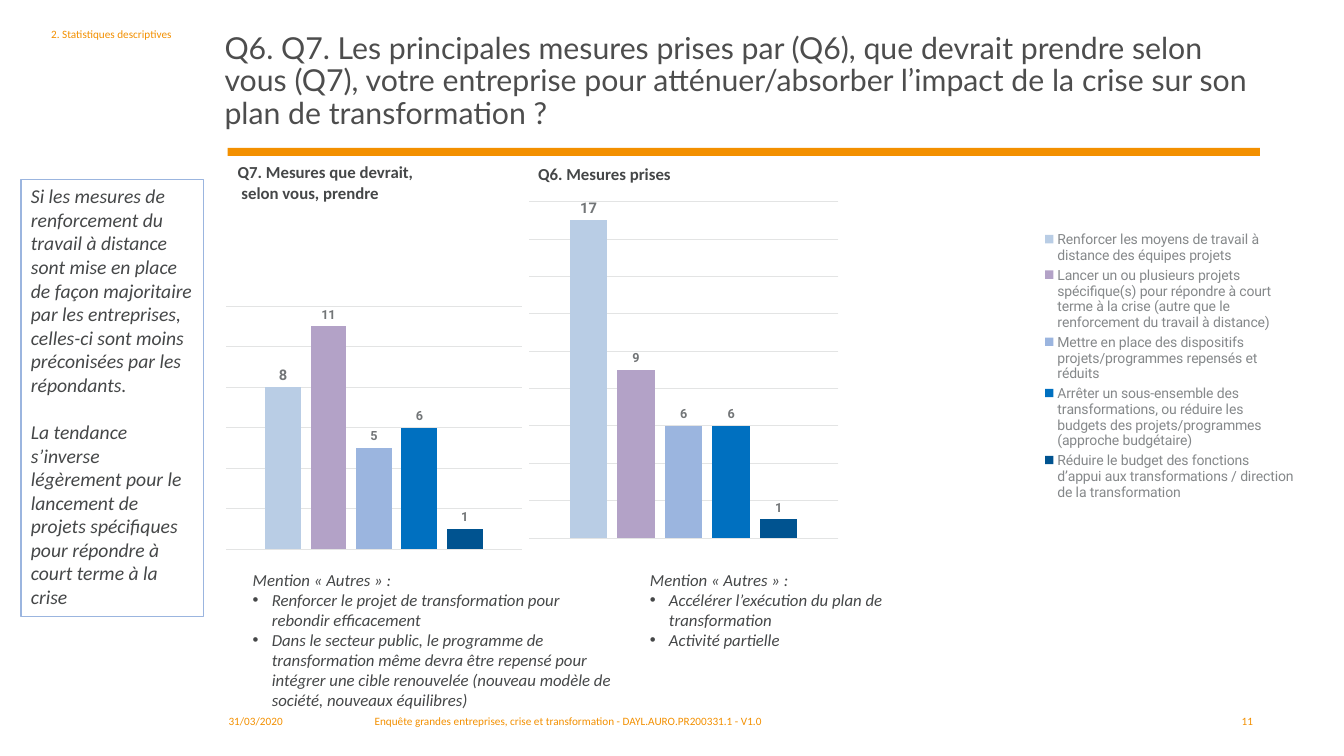
from dataclasses import dataclass

from lxml import etree
from pptx import Presentation
from pptx.chart.chart import Chart
from pptx.chart.data import CategoryChartData
from pptx.dml.color import RGBColor
from pptx.enum.chart import XL_CHART_TYPE, XL_LABEL_POSITION, XL_LEGEND_POSITION
from pptx.enum.shapes import MSO_SHAPE
from pptx.enum.text import MSO_ANCHOR, PP_ALIGN
from pptx.oxml import parse_xml
from pptx.oxml.ns import nsdecls, qn
from pptx.slide import Slide
from pptx.text.text import TextFrame
from pptx.util import Cm, Pt

COLUMNS = XL_CHART_TYPE.COLUMN_CLUSTERED
OUTSIDE_END = XL_LABEL_POSITION.OUTSIDE_END
LEGEND_RIGHT = XL_LEGEND_POSITION.RIGHT
RECTANGLE = MSO_SHAPE.RECTANGLE
TOP, BOTTOM = MSO_ANCHOR.TOP, MSO_ANCHOR.BOTTOM
LEFT, RIGHT = PP_ALIGN.LEFT, PP_ALIGN.RIGHT

ORANGE = RGBColor(0xF3, 0x90, 0x00)
TITLE_GREY = RGBColor(0x4D, 0x4D, 0x4D)
TEXT_GREY = RGBColor(0x45, 0x47, 0x48)
LABEL_GREY = RGBColor(0x72, 0x75, 0x77)
LEGEND_GREY = RGBColor(0x85, 0x88, 0x8A)
GRID_GREY = RGBColor(0xE3, 0xE4, 0xE4)
WHITE = RGBColor(0xFF, 0xFF, 0xFF)
BORDER_BLUE = RGBColor(0x9B, 0xB5, 0xDF)


@dataclass(frozen=True)
class Area:
    left: float
    top: float
    width: float
    height: float

    def lengths(self) -> tuple[Cm, Cm, Cm, Cm]:
        return Cm(self.left), Cm(self.top), Cm(self.width), Cm(self.height)


@dataclass(frozen=True)
class Style:
    size: float
    color: RGBColor
    font: str = "Calibri"
    bold: bool = False
    italic: bool = False


@dataclass(frozen=True)
class TextBlock:
    area: Area
    lines: tuple[str, ...]
    style: Style
    align: PP_ALIGN = LEFT
    anchor: MSO_ANCHOR = TOP
    line_spacing: float = 1.0
    bulleted: bool = False


@dataclass(frozen=True)
class Measure:
    name: str
    color: RGBColor
    wanted: int
    taken: int
    label_size: float = 9


@dataclass(frozen=True)
class MeasureChart:
    area: Area
    field: str
    maximum: int
    plot: Area
    legend: bool


TITLE_STYLE = Style(21.6, TITLE_GREY, "Lato")
SMALL = Style(8, ORANGE)
HEADING = Style(12, TEXT_GREY, bold=True)
NOTE = Style(12, TEXT_GREY, italic=True)
COMMENT = Style(14, TEXT_GREY, italic=True)

RULE = Area(5.74, 3.73, 26.01, 0.2)
COMMENT_AREA = Area(0.53, 4.52, 4.6, 11.02)
COMMENT_LINES = (
    "Si les mesures de renforcement du travail à distance sont mise en place de façon "
    "majoritaire par les entreprises, celles-ci sont moins préconisées par les répondants.",
    "La tendance s’inverse légèrement pour le lancement de projets spécifiques pour "
    "répondre à court terme à la crise",
)

TEXTS = (
    TextBlock(Area(5.41, 0.56, 26.34, 2.87), (
        "Q6. Q7. Les principales mesures prises par (Q6), que devrait prendre selon vous (Q7), "
        "votre entreprise pour atténuer/absorber l’impact de la crise sur son plan de "
        "transformation ?",), TITLE_STYLE, anchor=BOTTOM, line_spacing=0.9),
    TextBlock(Area(1.04, 0.56, 4.29, 3.48), ("2. Statistiques descriptives",), SMALL),
    TextBlock(Area(5.51, 17.88, 3.61, 0.91), ("31/03/2020",), SMALL),
    TextBlock(Area(9.19, 17.88, 13.89, 0.91), (
        "Enquête grandes entreprises, crise et transformation - DAYL.AURO.PR200331.1 - V1.0",),
        SMALL),
    TextBlock(Area(28.73, 17.88, 3.1, 0.91), ("11",), SMALL, align=RIGHT),
    TextBlock(Area(13.31, 3.99, 7.62, 0.76), ("Q6. Mesures prises",), HEADING),
    TextBlock(Area(5.74, 3.96, 16.94, 1.27),
              ("Q7. Mesures que devrait,", " selon vous, prendre"), HEADING),
    TextBlock(Area(6.12, 14.22, 9.6, 3.84), (
        "Mention « Autres » :",
        "Renforcer le projet de transformation pour rebondir efficacement",
        "Dans le secteur public, le programme de transformation même devra être repensé pour "
        "intégrer une cible renouvelée (nouveau modèle de société, nouveaux équilibres)",
    ), NOTE, bulleted=True),
    TextBlock(Area(16.13, 14.22, 7.82, 2.31), (
        "Mention « Autres » :",
        "Accélérer l’exécution du plan de transformation",
        "Activité partielle",
    ), NOTE, bulleted=True),
)

MEASURES = (
    Measure("Renforcer les moyens de travail à distance des équipes projets",
            RGBColor(0xB9, 0xCD, 0xE5), 8, 17, 10.5),
    Measure("Lancer un ou plusieurs projets spécifique(s) pour répondre à court terme à la crise "
            "(autre que le renforcement du travail à distance)",
            RGBColor(0xB3, 0xA2, 0xC7), 11, 9),
    Measure("Mettre en place des dispositifs projets/programmes repensés et réduits",
            RGBColor(0x9B, 0xB5, 0xDF), 5, 6),
    Measure("Arrêter un sous-ensemble des transformations, ou réduire les budgets des "
            "projets/programmes (approche budgétaire)", RGBColor(0x00, 0x70, 0xC0), 6, 6),
    Measure("Réduire le budget des fonctions d’appui aux transformations / direction de la "
            "transformation", RGBColor(0x00, 0x53, 0x90), 1, 1),
)

CHARTS = (
    MeasureChart(Area(5.54, 7.59, 7.77, 6.38), "wanted", 12, Area(0.02, 0.02, 0.96, 0.96), False),
    MeasureChart(Area(12.93, 4.52, 19.99, 9.42), "taken", 18, Area(0.02, 0.06, 0.39, 0.9), True),
)


def apply_style(font, style: Style) -> None:
    font.name, font.size = style.font, Pt(style.size)
    font.bold, font.italic = style.bold, style.italic
    font.color.rgb = style.color


def write_lines(frame: TextFrame, block: TextBlock, gap: float = 0) -> None:
    frame.word_wrap = True
    frame.vertical_anchor = block.anchor
    for index, line in enumerate(block.lines):
        para = frame.add_paragraph() if index else frame.paragraphs[0]
        para.text = line
        para.alignment = block.align
        para.line_spacing = block.line_spacing
        if index:
            para.space_before = Pt(gap)
        if block.bulleted and index:
            properties = para._p.get_or_add_pPr()
            properties.set("marL", str(Cm(0.48)))
            properties.set("indent", str(-Cm(0.48)))
            etree.SubElement(properties, qn("a:buFont")).set("typeface", "Arial")
            etree.SubElement(properties, qn("a:buChar")).set("char", "•")
        apply_style(para.font, block.style)


def add_rectangle(page: Slide, area: Area, fill: RGBColor):
    box = page.shapes.add_shape(RECTANGLE, *area.lengths())
    box.shadow.inherit = False
    box.fill.solid()
    box.fill.fore_color.rgb = fill
    box.line.fill.background()
    return box


def place_plot(chart: Chart, plot: Area) -> None:
    sizes = (("x", plot.left), ("y", plot.top), ("w", plot.width), ("h", plot.height))
    modes = "".join(f'<c:{key}Mode val="edge"/>' for key in "xy")
    values = "".join(f'<c:{key} val="{value}"/>' for key, value in sizes)
    layout = parse_xml(
        f'<c:layout {nsdecls("c")}><c:manualLayout><c:layoutTarget val="inner"/>'
        f'{modes}{values}</c:manualLayout></c:layout>')
    plot_area = chart._chartSpace.chart.plotArea
    for former in plot_area.findall(qn("c:layout")):
        plot_area.remove(former)
    plot_area.insert(0, layout)
    chart._chartSpace.chart.addnext(parse_xml(
        f'<c:spPr {nsdecls("c", "a")}><a:noFill/><a:ln><a:noFill/></a:ln></c:spPr>'))


def add_measure_chart(page: Slide, design: MeasureChart) -> None:
    data = CategoryChartData()
    data.categories = ["1"]
    for measure in MEASURES:
        data.add_series(measure.name, [getattr(measure, design.field)])
    chart = page.shapes.add_chart(COLUMNS, *design.area.lengths(), data).chart
    apply_style(chart.font, Style(10, TEXT_GREY, "Roboto"))
    chart.has_title = False
    chart.has_legend = design.legend
    if design.legend:
        chart.legend.position = LEGEND_RIGHT
        chart.legend.include_in_layout = False
        apply_style(chart.legend.font, Style(10, LEGEND_GREY, "Roboto"))
    chart.category_axis.visible = False
    axis = chart.value_axis
    axis.visible = False
    axis.minimum_scale, axis.maximum_scale, axis.major_unit = 0, design.maximum, 2
    axis.has_major_gridlines = True
    axis.major_gridlines.format.line.color.rgb = GRID_GREY
    axis.major_gridlines.format.line.width = Pt(0.75)
    plot = chart.plots[0]
    plot.gap_width, plot.overlap, plot.vary_by_categories = 219, -27, False
    for series, measure in zip(plot.series, MEASURES):
        series.format.fill.solid()
        series.format.fill.fore_color.rgb = measure.color
        labels = series.data_labels
        labels.show_value, labels.position = True, OUTSIDE_END
        apply_style(labels.font, Style(measure.label_size, LABEL_GREY, "Roboto", bold=True))
    place_plot(chart, design.plot)


def main() -> None:
    deck = Presentation()
    deck.slide_width, deck.slide_height = Cm(33.87), Cm(19.05)
    page = deck.slides.add_slide(deck.slide_layouts[6])
    add_rectangle(page, RULE, ORANGE)
    for design in CHARTS:
        add_measure_chart(page, design)
    for block in TEXTS:
        write_lines(page.shapes.add_textbox(*block.area.lengths()).text_frame, block)
    comment = add_rectangle(page, COMMENT_AREA, WHITE)
    comment.line.color.rgb = BORDER_BLUE
    comment.line.width = Pt(1)
    write_lines(comment.text_frame, TextBlock(COMMENT_AREA, COMMENT_LINES, COMMENT), gap=17)
    deck.save("out.pptx")


if __name__ == "__main__":
    main()
